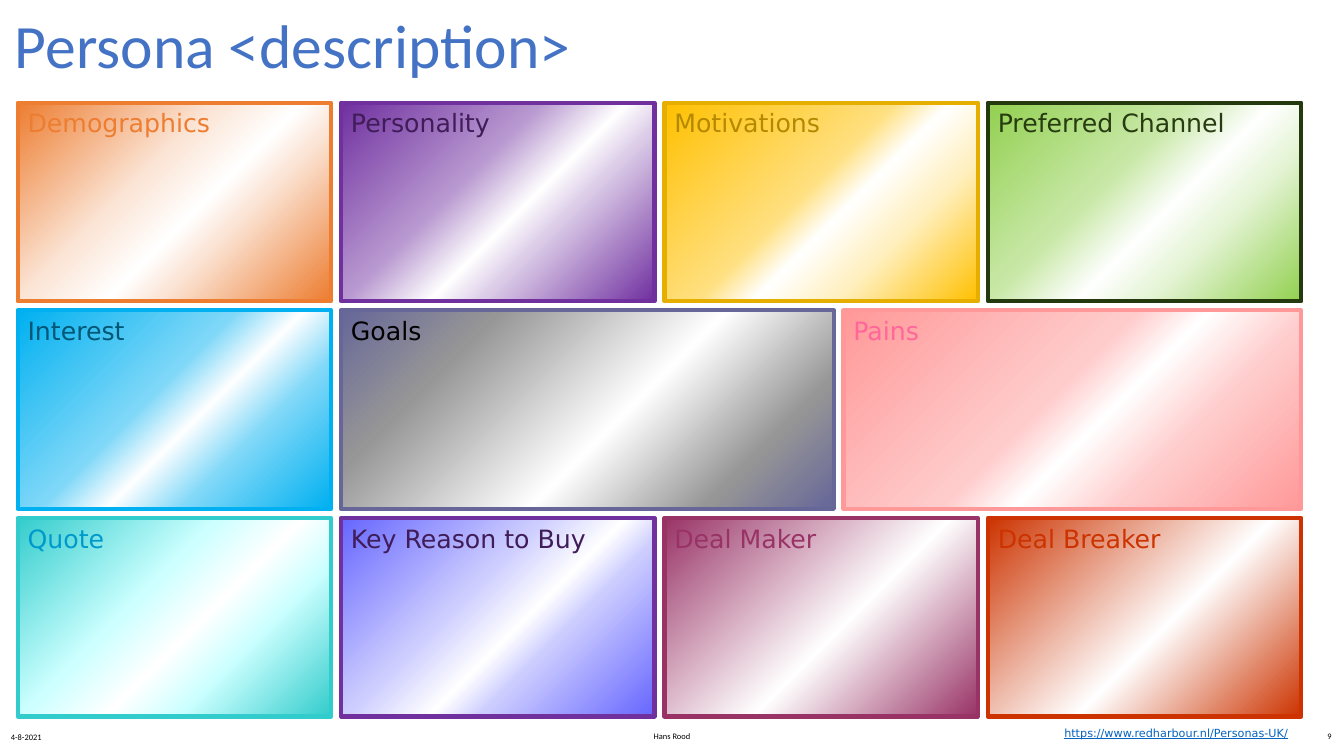
from dataclasses import dataclass

from lxml import etree
from pptx import Presentation
from pptx import util as u
from pptx.dml.color import RGBColor
from pptx.enum import shapes, text
from pptx.oxml import ns

# Colours
BLACK = RGBColor(0x00, 0x00, 0x00)
WHITE = RGBColor(0xFF, 0xFF, 0xFF)
BLUE = RGBColor(0x44, 0x72, 0xC4)
LINK = RGBColor(0x05, 0x63, 0xC1)
ORANGE = RGBColor(0xED, 0x7D, 0x31)
PEACH = RGBColor(0xFB, 0xE5, 0xD6)
PURPLE = RGBColor(0x70, 0x30, 0xA0)
GRAPE = RGBColor(0x70, 0x31, 0x9F)
MAUVE = RGBColor(0xB8, 0x98, 0xD0)
LILAC = RGBColor(0xDC, 0xCC, 0xE8)
PLUM = RGBColor(0x40, 0x1C, 0x58)
GOLD = RGBColor(0xFF, 0xC0, 0x00)
LEMON = RGBColor(0xFF, 0xE0, 0x80)
CREAM = RGBColor(0xFF, 0xF0, 0xC0)
AMBER = RGBColor(0xE6, 0xAF, 0x00)
BRONZE = RGBColor(0xB4, 0x89, 0x00)
GREEN = RGBColor(0x92, 0xD0, 0x50)
LIME = RGBColor(0xC9, 0xE8, 0xA8)
MINT = RGBColor(0xE4, 0xF4, 0xD4)
FOREST = RGBColor(0x25, 0x39, 0x0F)
MOSS = RGBColor(0x27, 0x3C, 0x10)
AZURE = RGBColor(0x00, 0xB0, 0xF0)
SKY = RGBColor(0x80, 0xD8, 0xF8)
NAVY = RGBColor(0x00, 0x57, 0x76)
SLATE = RGBColor(0x66, 0x66, 0x99)
GREY = RGBColor(0x96, 0x96, 0x96)
SALMON = RGBColor(0xFF, 0x99, 0x99)
BLUSH = RGBColor(0xFF, 0xCC, 0xCC)
PINK = RGBColor(0xFF, 0x66, 0x99)
TEAL = RGBColor(0x33, 0xCC, 0xCC)
AQUA = RGBColor(0xCC, 0xFF, 0xFF)
CYAN = RGBColor(0x00, 0x99, 0xCC)
INDIGO = RGBColor(0x66, 0x66, 0xFF)
PALE = RGBColor(0xCC, 0xCC, 0xFF)
WINE = RGBColor(0x99, 0x33, 0x66)
RED = RGBColor(0xCC, 0x33, 0x00)

# Grid, in points
LEFT, TOP = 12.6, 73.4
WIDE, HIGH = 223.9, 141.8
STEP, DROP = 231, 148.3
GOALS, PAINS = 352, 327


@dataclass
class Card:
    name: str
    left: float
    row: int
    edge: RGBColor
    ink: RGBColor
    stops: list[tuple[int, RGBColor]]
    wide: float = WIDE


def col(num: int) -> float:
    return LEFT + num * STEP


def blend(rim: RGBColor, *tints: tuple[int, RGBColor]) -> list[tuple[int, RGBColor]]:
    """Run from the rim colour to a white band and back."""
    return sorted([(0, rim), *tints, (56, WHITE), (100, rim)])


CARDS = [
    Card("Demographics", col(0), 0, ORANGE, ORANGE,
         blend(ORANGE, (39, PEACH), (66, PEACH))),
    Card("Personality", col(1), 0, GRAPE, PLUM,
         blend(PURPLE, (39, MAUVE), (66, LILAC))),
    Card("Motivations", col(2), 0, AMBER, BRONZE,
         blend(GOLD, (45, LEMON), (72, CREAM))),
    Card("Preferred Channel", col(3), 0, FOREST, MOSS,
         blend(GREEN, (39, LIME), (70, MINT))),
    Card("Interest", col(0), 1, AZURE, NAVY,
         blend(AZURE, (43, SKY), (71, SKY))),
    Card("Goals", col(1), 1, SLATE, BLACK,
         blend(SLATE, (23, GREY), (81, GREY)), GOALS),
    Card("Pains", col(3) + WIDE - PAINS, 1, SALMON, PINK,
         blend(SALMON, (45, BLUSH), (72, BLUSH)), PAINS),
    Card("Quote", col(0), 2, TEAL, CYAN,
         blend(TEAL, (39, AQUA), (70, AQUA))),
    Card("Key Reason to Buy", col(1), 2, GRAPE, PLUM,
         blend(INDIGO, (39, PALE), (66, PALE))),
    Card("Deal Maker", col(2), 2, WINE, WINE, blend(WINE)),
    Card("Deal Breaker", col(3), 2, RED, RED, blend(RED)),
]


def write(shape, words: str, *, size: float, ink: RGBColor, face: str = "Calibri",
          align=text.PP_ALIGN.LEFT, anchor=text.MSO_ANCHOR.MIDDLE,
          space: float = 1.0, under: bool = False) -> None:
    frame = shape.text_frame
    frame.word_wrap = True
    frame.vertical_anchor = anchor
    para = frame.paragraphs[0]
    para.alignment = align
    para.line_spacing = space
    run = para.add_run()
    run.text = words
    font = run.font
    font.name, font.size, font.underline = face, u.Pt(size), under
    font.color.rgb = ink


def label(slide, words: str, left: float, top: float, wide: float, high: float,
          **style) -> None:
    box = slide.shapes.add_textbox(u.Pt(left), u.Pt(top), u.Pt(wide), u.Pt(high))
    write(box, words, **style)


def shade(shape, stops: list[tuple[int, RGBColor]]) -> None:
    shape.fill.gradient()
    shape.fill.gradient_angle = 315  # counted anticlockwise
    group = shape._element.spPr.find(".//" + ns.qn("a:gsLst"))
    for old in list(group):
        group.remove(old)
    for place, tone in stops:
        stop = etree.SubElement(group, ns.qn("a:gs"), pos=str(place * 1000))
        etree.SubElement(stop, ns.qn("a:srgbClr"), val=str(tone))


def draw(slide, card: Card) -> None:
    box = slide.shapes.add_shape(
        shapes.MSO_SHAPE.RECTANGLE, u.Pt(card.left), u.Pt(TOP + card.row * DROP),
        u.Pt(card.wide), u.Pt(HIGH))
    box.shadow.inherit = False
    shade(box, card.stops)
    box.line.color.rgb = card.edge
    box.line.width = u.Pt(3)
    write(box, card.name, size=18, ink=card.ink, face="DejaVu Sans",
          anchor=text.MSO_ANCHOR.TOP)


def main() -> None:
    deck = Presentation()
    deck.slide_width, deck.slide_height = u.Pt(960), u.Pt(540)
    slide = deck.slides.add_slide(deck.slide_layouts[6])

    # Title
    label(slide, "Persona <description>", 3.6, 3.6, 846, 62.6,
          size=44, ink=BLUE, space=0.9)

    # Persona cards
    for card in CARDS:
        draw(slide, card)

    # Footer
    foot = {"size": 6, "ink": BLACK}
    label(slide, "4-8-2021", 0.7, 512, 216, 28.8, **foot)
    label(slide, "Hans Rood", 318, 511.2, 324, 28.8,
          align=text.PP_ALIGN.CENTER, **foot)
    label(slide, "9", 742.3, 511.2, 216, 28.8, align=text.PP_ALIGN.RIGHT, **foot)
    label(slide, "https://www.redharbour.nl/Personas-UK/", 753.1, 515.5, 186.5, 17.3,
          size=8, ink=LINK, face="DejaVu Sans", anchor=text.MSO_ANCHOR.TOP,
          under=True)

    deck.save("out.pptx")


if __name__ == "__main__":
    main()
